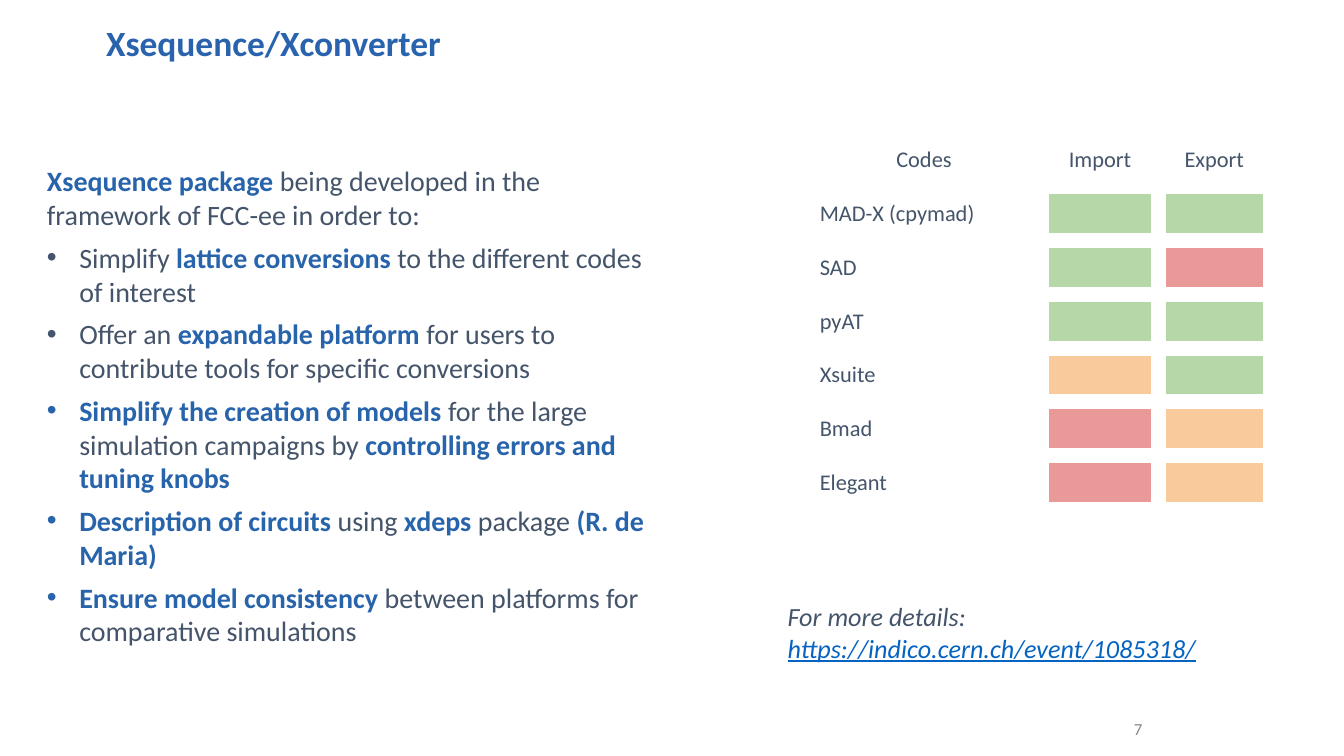
"""Build the Xsequence/Xconverter slide with its code support table."""
from dataclasses import dataclass
from typing import Any

from lxml import etree
from pptx import Presentation
from pptx.dml.color import RGBColor
from pptx.enum.text import MSO_ANCHOR, MSO_AUTO_SIZE, PP_ALIGN
from pptx.oxml.ns import qn
from pptx.util import Inches, Pt

LEFT, CENTER, RIGHT = PP_ALIGN.LEFT, PP_ALIGN.CENTER, PP_ALIGN.RIGHT
TOP, MIDDLE = MSO_ANCHOR.TOP, MSO_ANCHOR.MIDDLE
NO_FIT, GROW = MSO_AUTO_SIZE.NONE, MSO_AUTO_SIZE.SHAPE_TO_FIT_TEXT
SLIDE_WIDTH = Inches(10)
SLIDE_HEIGHT = SLIDE_WIDTH * 9 // 16


@dataclass(frozen=True)
class Theme:
    """Colours and type sizes of the slide."""
    font: str = "Calibri"
    ink: str = "44546A"
    title: str = "2A63AD"
    accent: str = "2864AB"
    link: str = "0563C1"
    muted: str = "888888"
    paper: str = "FFFFFF"
    supported: str = "B6D7A8"
    partial: str = "F9CB9C"
    missing: str = "EA9999"
    title_size: float = 19
    body_size: float = 15
    detail_size: float = 14
    table_size: float = 12
    number_size: float = 9
    border: float = 9


THEME = Theme()


@dataclass(frozen=True)
class Span:
    """Piece of text in one style."""
    text: str
    size: float = THEME.body_size
    color: str = THEME.ink
    bold: bool = False
    italic: bool = False
    underline: bool = False


@dataclass(frozen=True)
class Box:
    """Place of a text box in inches."""
    left: float
    top: float
    width: float
    height: float


@dataclass(frozen=True)
class CodeSupport:
    """Import and export status of one code."""
    code: str
    imports: str
    exports: str


INTRO = "*Xsequence package* being developed in the framework of FCC-ee in order to:"
GOALS = [
    "Simplify *lattice conversions *to the different codes of interest",
    "Offer an *expandable platform* for users to contribute tools for specific conversions",
    "*Simplify the creation of models *for the large simulation campaigns by "
    "*controlling errors and tuning knobs*",
    "*Description of circuits *using *xdeps *package* (R. de Maria)*",
    "*Ensure model consistency *between platforms for comparative simulations",
]
HEADINGS = ["Codes", "Import", "Export"]
SUPPORT = [
    CodeSupport("MAD-X (cpymad)", THEME.supported, THEME.supported),
    CodeSupport("SAD", THEME.supported, THEME.missing),
    CodeSupport("pyAT", THEME.supported, THEME.supported),
    CodeSupport("Xsuite", THEME.partial, THEME.supported),
    CodeSupport("Bmad", THEME.missing, THEME.partial),
    CodeSupport("Elegant", THEME.missing, THEME.partial),
]
COLUMN_WIDTHS = [1.75, 0.87, 0.83]
ROW_HEIGHT = 0.4


def apply_format(target: Any, values: dict[str, Any]) -> None:
    """Set each named attribute on the target."""
    for name, value in values.items():
        setattr(target, name, value)


def emphasised(marked: str) -> list[Span]:
    """Split text at asterisks into plain and accented spans."""
    return [
        Span(part, color=THEME.accent if i % 2 else THEME.ink, bold=bool(i % 2))
        for i, part in enumerate(marked.split("*")) if part
    ]


def write_spans(paragraph: Any, spans: list[Span], align: Any = LEFT) -> None:
    """Fill a paragraph with styled spans."""
    paragraph.alignment = align
    for span in spans:
        run = paragraph.add_run()
        run.text = span.text
        run.font.color.rgb = RGBColor.from_string(span.color)
        apply_format(run.font, {
            "name": THEME.font, "size": Pt(span.size), "bold": span.bold,
            "italic": span.italic, "underline": span.underline,
        })


def add_bullet(paragraph: Any, color: str) -> None:
    """Give a paragraph a hanging bullet."""
    paragraph.space_before = Pt(5)
    properties = paragraph._p.get_or_add_pPr()
    properties.set("marL", str(Inches(0.24)))
    properties.set("indent", str(Inches(-0.24)))
    bullet_color = etree.SubElement(properties, qn("a:buClr"))
    etree.SubElement(bullet_color, qn("a:srgbClr"), val=color)
    etree.SubElement(properties, qn("a:buFont"), typeface="Arial")
    etree.SubElement(properties, qn("a:buChar"), char="•")


def add_text(slide: Any, box: Box, paragraphs: list[list[Span]], align: Any = LEFT,
             anchor: Any = TOP, fit: Any = NO_FIT, bulleted_from: int = 99) -> None:
    """Add a wrapped text box, with bullets from the given paragraph on."""
    frame = slide.shapes.add_textbox(
        Inches(box.left), Inches(box.top), Inches(box.width), Inches(box.height)).text_frame
    apply_format(frame, {
        "word_wrap": True, "auto_size": fit, "vertical_anchor": anchor,
        "margin_left": Inches(0.07), "margin_right": Inches(0.07),
        "margin_top": Inches(0.04), "margin_bottom": Inches(0.04),
    })
    for i, spans in enumerate(paragraphs):
        paragraph = frame.paragraphs[0] if i == 0 else frame.add_paragraph()
        if i >= bulleted_from:
            add_bullet(paragraph, spans[0].color)
        write_spans(paragraph, spans, align)


def style_cell(cell: Any, fill: str, text: str = "", align: Any = LEFT) -> None:
    """Fill, border and label one table cell."""
    cell.fill.solid()
    cell.fill.fore_color.rgb = RGBColor.from_string(fill)
    apply_format(cell, {
        "margin_left": Inches(0.1), "margin_right": Inches(0.1),
        "margin_top": Inches(0.1 if text else 0), "margin_bottom": Inches(0.05 if text else 0),
    })
    properties = cell._tc.get_or_add_tcPr()
    for i, side in enumerate(("a:lnL", "a:lnR", "a:lnT", "a:lnB")):
        line = etree.Element(qn(side), w=str(Pt(THEME.border)))
        solid = etree.SubElement(line, qn("a:solidFill"))
        etree.SubElement(solid, qn("a:srgbClr"), val=THEME.paper)
        properties.insert(i, line)
    if text:
        write_spans(cell.text_frame.paragraphs[0], [Span(text, THEME.table_size)], align)


def add_support_table(slide: Any) -> None:
    """Draw the import and export status of each code."""
    row_count = len(SUPPORT) + 1
    table = slide.shapes.add_table(
        row_count, len(HEADINGS), Inches(6), Inches(0.99),
        Inches(sum(COLUMN_WIDTHS)), Inches(ROW_HEIGHT * row_count)).table
    apply_format(table, {"first_row": False, "horz_banding": False})
    for column, width in zip(table.columns, COLUMN_WIDTHS):
        column.width = Inches(width)
    for i, heading in enumerate(HEADINGS):
        style_cell(table.cell(0, i), THEME.paper, heading, CENTER)
    for row, support in enumerate(SUPPORT, start=1):
        style_cell(table.cell(row, 0), THEME.paper, support.code)
        style_cell(table.cell(row, 1), support.imports)
        style_cell(table.cell(row, 2), support.exports)


def main() -> None:
    """Build and save the slide."""
    deck = Presentation()
    apply_format(deck, {"slide_width": SLIDE_WIDTH, "slide_height": SLIDE_HEIGHT})
    slide = deck.slides.add_slide(deck.slide_layouts[6])
    add_text(slide, Box(6.88, 5.27, 1.69, 0.3),
             [[Span("7", THEME.number_size, THEME.muted)]], RIGHT, MIDDLE)
    add_text(slide, Box(0.28, 0.12, 3.07, 0.4),
             [[Span("Xsequence/Xconverter", THEME.title_size, THEME.title, bold=True)]],
             RIGHT, fit=GROW)
    add_text(slide, Box(0.28, 1.18, 4.67, 1.4),
             [emphasised(text) for text in [INTRO, *GOALS]], bulleted_from=1)
    add_text(slide, Box(5.79, 4.43, 3.88, 0.55), [
        [Span("For more details:", THEME.detail_size, italic=True)],
        [Span("https://indico.cern.ch/event/1085318/", THEME.detail_size, THEME.link,
              italic=True, underline=True)],
    ], fit=GROW)
    add_support_table(slide)
    deck.save("out.pptx")


if __name__ == "__main__":
    main()
